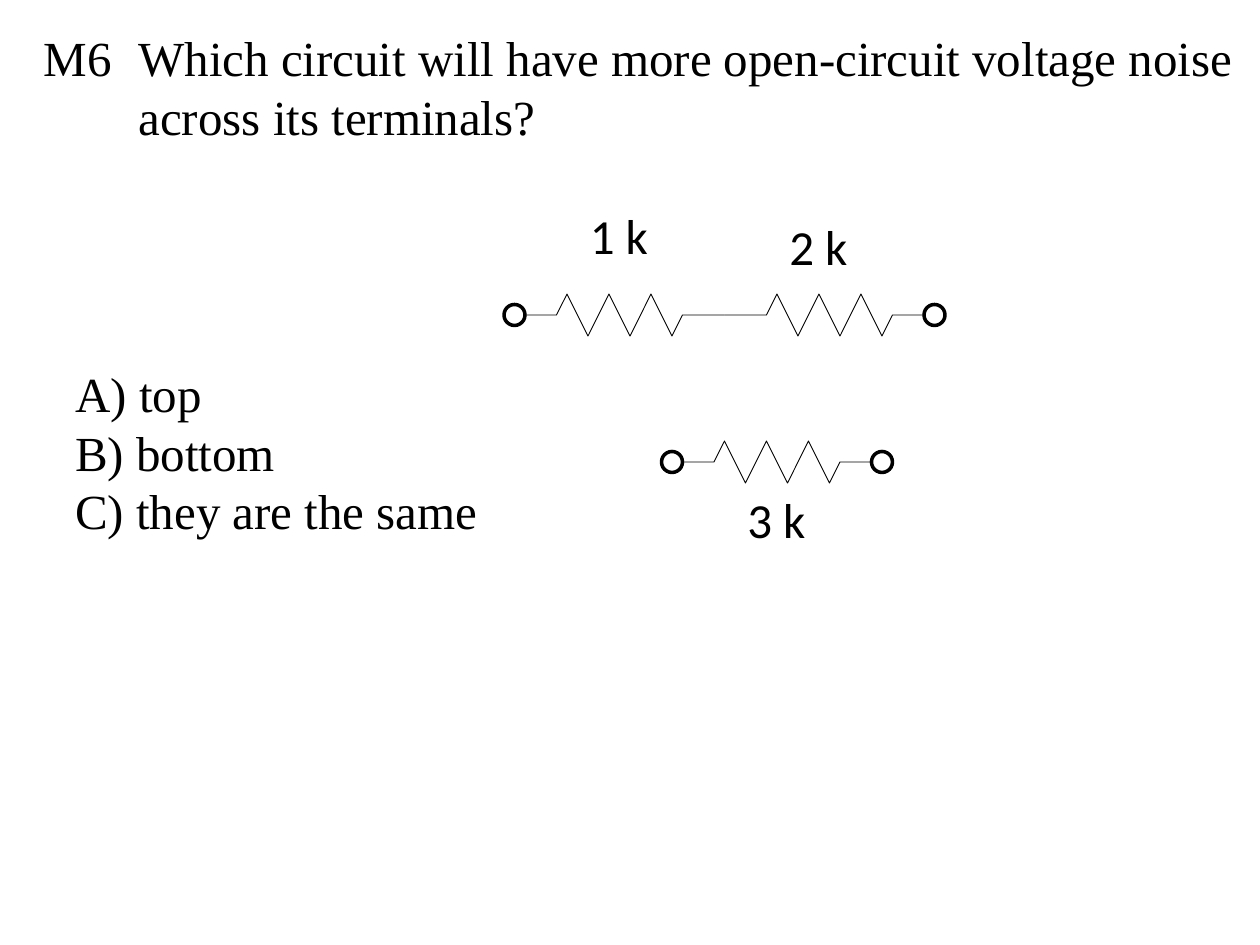
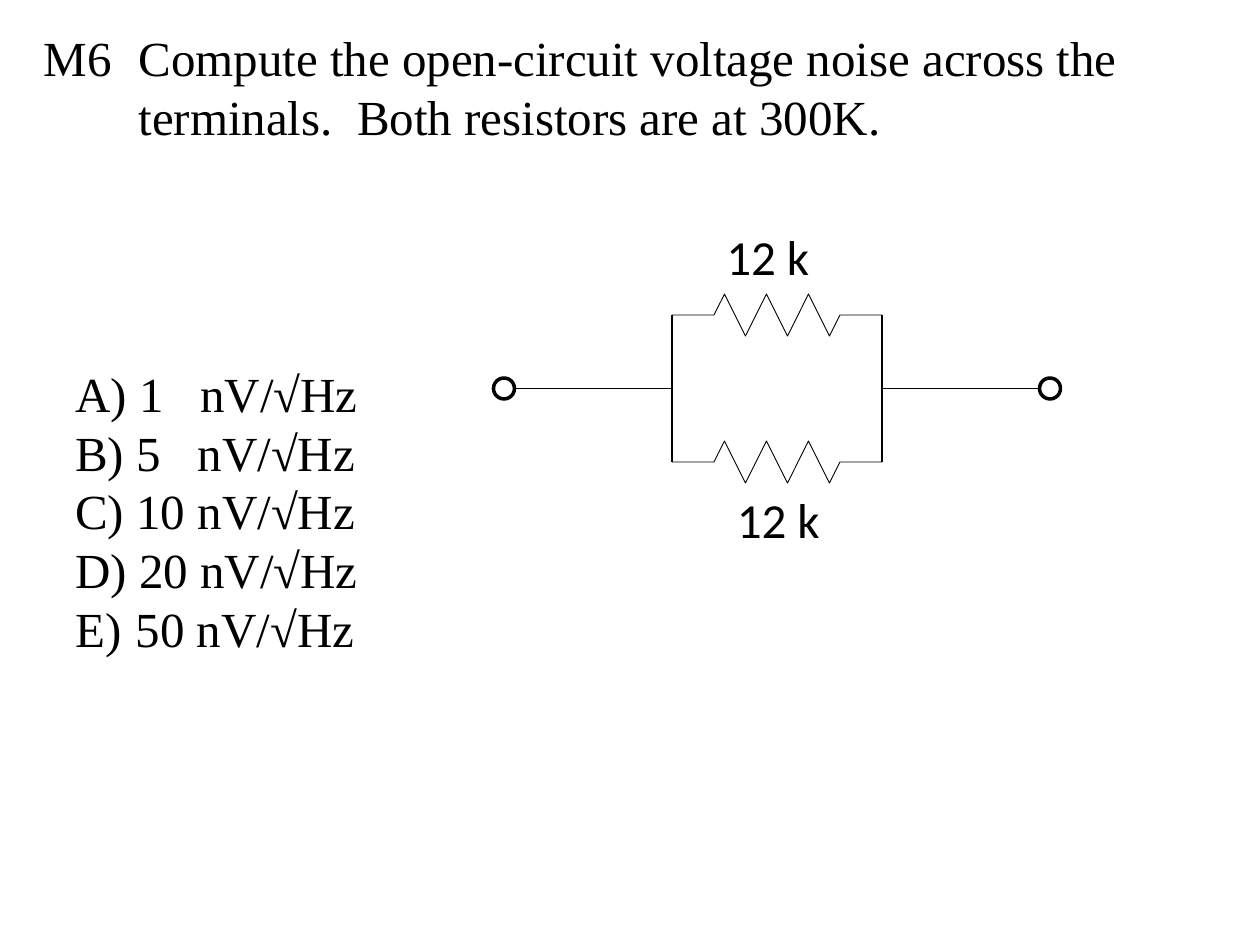
from lxml import etree
from pptx import Presentation
from pptx import util as u
from pptx.dml.color import RGBColor
from pptx.enum import shapes, text
from pptx.oxml.ns import qn

GRID = 2.54 / 12
BLACK, WHITE = "000000", "FFFFFF"
SERIF, SANS = "Times New Roman", "Calibri"
SIZE = 28
TAG = "M6"
ZIGZAG = [(4, 0), (5, -2), (7, 2), (9, -2), (11, 2), (13, -2), (15, 2), (16, 0), (20, 0)]

SLIDES = [
    {
        "title": "Which circuit will have more open-circuit voltage noise across its terminals?",
        "answers": [" top", " bottom", " they are the same"],
        "resistors": [(49, 30), (69, 30), (64, 44)],
        "labels": [("1 k", 55, 19, 8), ("2 k", 74, 20, 8), ("3 k", 70, 46, 8)],
        "ends": [(49, 30), (89, 30), (64, 44), (84, 44)],
        "wires": [],
    },
    {
        "title": "Compute the open-circuit voltage noise across the terminals.  Both resistors are at 300K.",
        "answers": [" 1   nV/√Hz", " 5   nV/√Hz", " 10 nV/√Hz", " 20 nV/√Hz", " 50 nV/√Hz"],
        "resistors": [(64, 30), (64, 44)],
        "labels": [("12 k", 68, 21, 11), ("12 k", 69, 46, 12)],
        "ends": [(48, 37), (100, 37)],
        "wires": [(64, 30, 64, 44), (84, 30, 84, 44), (84, 37, 99, 37), (49, 37, 64, 37)],
    },
]


def grid(*units):
    return [u.Cm(n * GRID) for n in units]


def paint(code):
    return RGBColor.from_string(code)


def stroke(item, width):
    item.line.color.rgb = paint(BLACK)
    item.line.width = u.Pt(width)


def number(par):
    props = par._p.get_or_add_pPr()
    props.set("marL", str(u.Cm(0.97)))
    props.set("indent", str(-u.Cm(0.97)))
    etree.SubElement(props, qn("a:buFont")).set("typeface", SERIF)
    etree.SubElement(props, qn("a:buAutoNum")).set("type", "alphaUcParenR")


def write(slide, lines, place, font=SERIF, box=None, wrap=True, listed=False):
    box = box or slide.shapes.add_textbox(0, 0, 0, 0)
    box.left, box.top, box.width, box.height = grid(*place)
    frame = box.text_frame
    frame.word_wrap = wrap
    frame.auto_size = text.MSO_AUTO_SIZE.NONE
    frame.vertical_anchor = text.MSO_ANCHOR.TOP
    for i, line in enumerate(lines):
        par = frame.add_paragraph() if i else frame.paragraphs[0]
        par.alignment = text.PP_ALIGN.LEFT
        run = par.add_run()
        run.text = line
        run.font.name, run.font.size = font, u.Pt(SIZE)
        run.font.color.rgb = paint(BLACK)
        if listed:
            number(par)


def resist(slide, x, y):
    path = slide.shapes.build_freeform(x, y, scale=u.Cm(GRID))
    path.add_line_segments([(x + dx, y + dy) for dx, dy in ZIGZAG], close=False)
    item = path.convert_to_shape()
    item.shadow.inherit = False
    item.fill.background()
    stroke(item, 0.5)


def wire(slide, ends):
    item = slide.shapes.add_connector(shapes.MSO_CONNECTOR.STRAIGHT, *grid(*ends))
    etree.SubElement(item._element.spPr, qn("a:effectLst"))
    stroke(item, 0.75)


def ring(slide, x, y):
    item = slide.shapes.add_shape(shapes.MSO_SHAPE.OVAL, *grid(x - 1, y - 1, 2, 2))
    item.shadow.inherit = False
    item.fill.solid()
    item.fill.fore_color.rgb = paint(WHITE)
    stroke(item, 2)


def build(deck, data):
    slide = deck.slides.add_slide(deck.slide_layouts[5])
    write(slide, [TAG], (3, 2, 9, 6.8), wrap=False)
    write(slide, [data["title"]], (12, 2, 108, 12.5), box=slide.shapes.title)
    answers = data["answers"]
    write(slide, answers, (6, 34, 53, 1.2 + 5.65 * len(answers)), listed=True)
    for spot in data["resistors"]:
        resist(slide, *spot)
    for label, x, y, width in data["labels"]:
        write(slide, [label], (x, y, width, 6.8), font=SANS)
    for ends in data["wires"]:
        wire(slide, ends)
    for spot in data["ends"]:
        ring(slide, *spot)


def main():
    deck = Presentation()
    deck.slide_width, deck.slide_height = u.Cm(25.4), u.Cm(19.05)
    for data in SLIDES:
        build(deck, data)
    deck.save("out.pptx")


if __name__ == "__main__":
    main()
